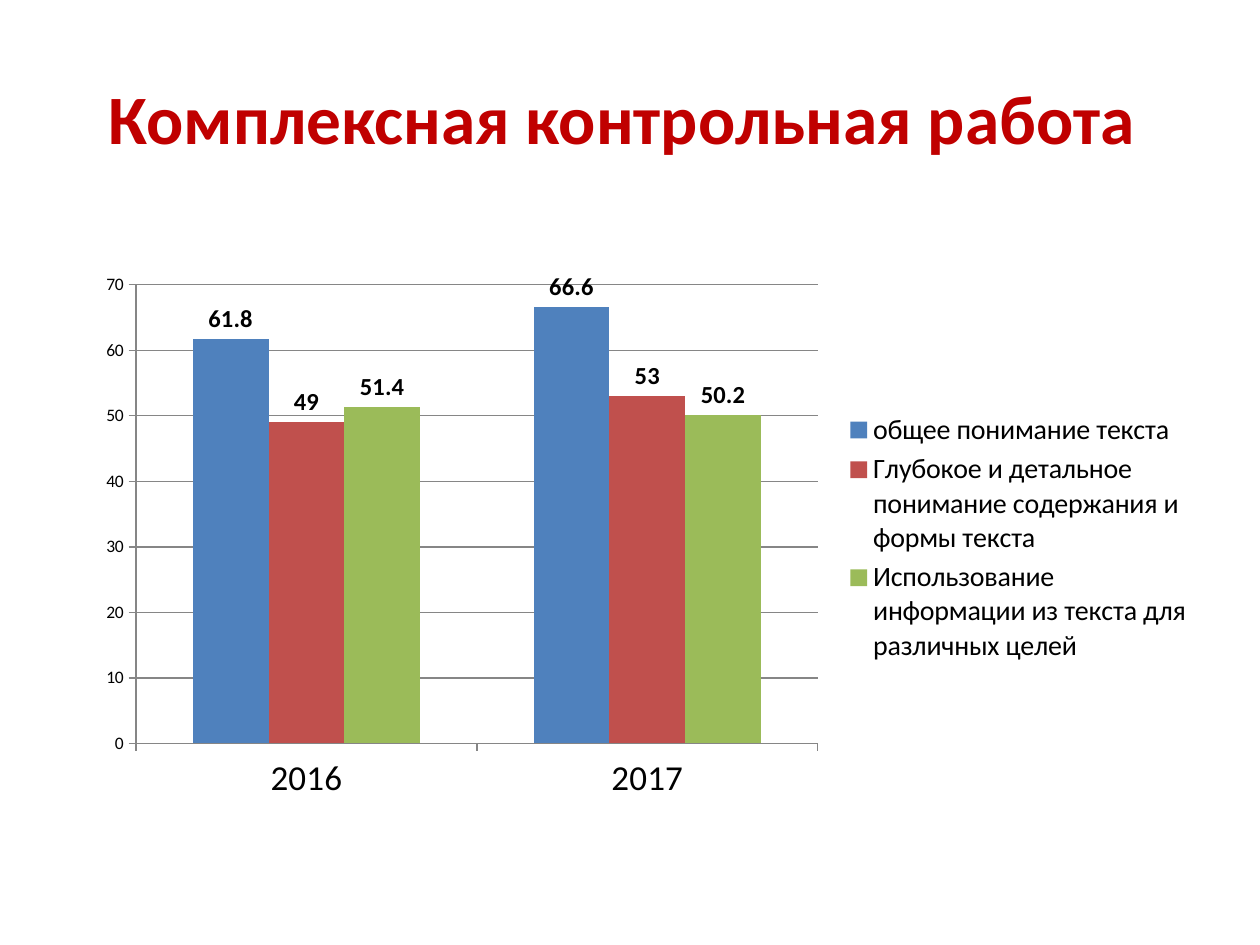
from lxml.etree import SubElement
from pptx import Presentation
from pptx.chart.data import CategoryChartData
from pptx.dml.color import RGBColor
from pptx.enum.chart import (XL_CHART_TYPE as ChartType, XL_LABEL_POSITION as LabelPosition,
                             XL_LEGEND_POSITION as LegendPosition, XL_TICK_MARK as TickMark)
from pptx.enum.text import MSO_ANCHOR as Anchor, MSO_AUTO_SIZE as AutoSize, PP_ALIGN as Align
from pptx.oxml.ns import qn
from pptx.util import Inches, Pt

HEADING = "Комплексная контрольная работа "
YEARS = ["2016", "2017"]
SKILLS = [
    ("общее понимание текста", (61.8, 66.6), "4F81BD"),
    ("Глубокое и детальное понимание содержания и формы текста", (49, 53), "C0504D"),
    ("Использование информации из текста для различных целей", (51.4, 50.2), "9BBB59"),
]
THEME = {
    "font": "Calibri", "heading": "C00000", "ink": "000000", "grid": "868686",
    "heading_size": 39.6, "year_size": 20, "legend_size": 16, "label_size": 14, "scale_size": 10,
}
HEADING_BOX = (0.5, 0.3, 9, 1.25)
CHART_BOX = (0.67, 2.1, 8.9, 4.34)
PLOT_BOX = (1.08, 2.26, 5.41, 3.64)


def style(font, size, color="ink", bold=False):
    font.name = THEME["font"]
    font.size = Pt(THEME[size])
    font.bold = bold
    font.color.rgb = RGBColor.from_string(THEME[color])


def add_heading(slide):
    heading = slide.shapes.title
    heading.left, heading.top, heading.width, heading.height = map(Inches, HEADING_BOX)
    frame = heading.text_frame
    frame.word_wrap = True
    frame.auto_size = AutoSize.NONE
    frame.vertical_anchor = Anchor.MIDDLE
    line = frame.paragraphs[0]
    line.alignment = Align.CENTER
    run = line.add_run()
    run.text = HEADING
    style(run.font, "heading_size", "heading", True)


def place_plot(chart):
    plot_area = chart._chartSpace.chart.plotArea
    for old in plot_area.findall(qn("c:layout")):
        plot_area.remove(old)
    layout = SubElement(plot_area, qn("c:layout"))
    plot_area.insert(0, layout)
    manual = SubElement(layout, qn("c:manualLayout"))
    left, top, width, height = CHART_BOX
    x, y, w, h = PLOT_BOX
    settings = [("layoutTarget", "inner"), ("xMode", "edge"), ("yMode", "edge"),
                ("x", (x - left) / width), ("y", (y - top) / height),
                ("w", w / width), ("h", h / height)]
    for tag, value in settings:
        text = value if isinstance(value, str) else f"{value:.3f}"
        SubElement(manual, qn(f"c:{tag}")).set("val", text)


def add_results(slide):
    results = CategoryChartData()
    results.categories = YEARS
    for skill, scores, _ in SKILLS:
        results.add_series(skill, scores)
    chart = slide.shapes.add_chart(
        ChartType.COLUMN_CLUSTERED, *map(Inches, CHART_BOX), results).chart
    style(chart.font, "scale_size")
    chart.has_title = False
    place_plot(chart)

    chart.has_legend = True
    chart.legend.position = LegendPosition.RIGHT
    chart.legend.include_in_layout = False
    style(chart.legend.font, "legend_size")

    scale = chart.value_axis
    scale.minimum_scale, scale.maximum_scale, scale.major_unit = 0, 70, 10
    scale.has_major_gridlines = True
    grid = RGBColor.from_string(THEME["grid"])
    scale.major_gridlines.format.line.color.rgb = grid
    for axis, size in ((chart.category_axis, "year_size"), (scale, "scale_size")):
        axis.major_tick_mark = TickMark.OUTSIDE
        axis.minor_tick_mark = TickMark.NONE
        axis.format.line.color.rgb = grid
        style(axis.tick_labels.font, size)

    columns = chart.plots[0]
    columns.gap_width = 150
    columns.overlap = 0
    columns.vary_by_categories = False
    for series, (_, _, color) in zip(columns.series, SKILLS):
        series.format.fill.solid()
        series.format.fill.fore_color.rgb = RGBColor.from_string(color)
        labels = series.data_labels
        labels.show_value = True
        labels.position = LabelPosition.OUTSIDE_END
        style(labels.font, "label_size", bold=True)


def main():
    deck = Presentation()
    deck.slide_width, deck.slide_height = Inches(10), Inches(7.5)
    slide = deck.slides.add_slide(deck.slide_layouts[5])
    add_heading(slide)
    add_results(slide)
    deck.save("out.pptx")


if __name__ == "__main__":
    main()
